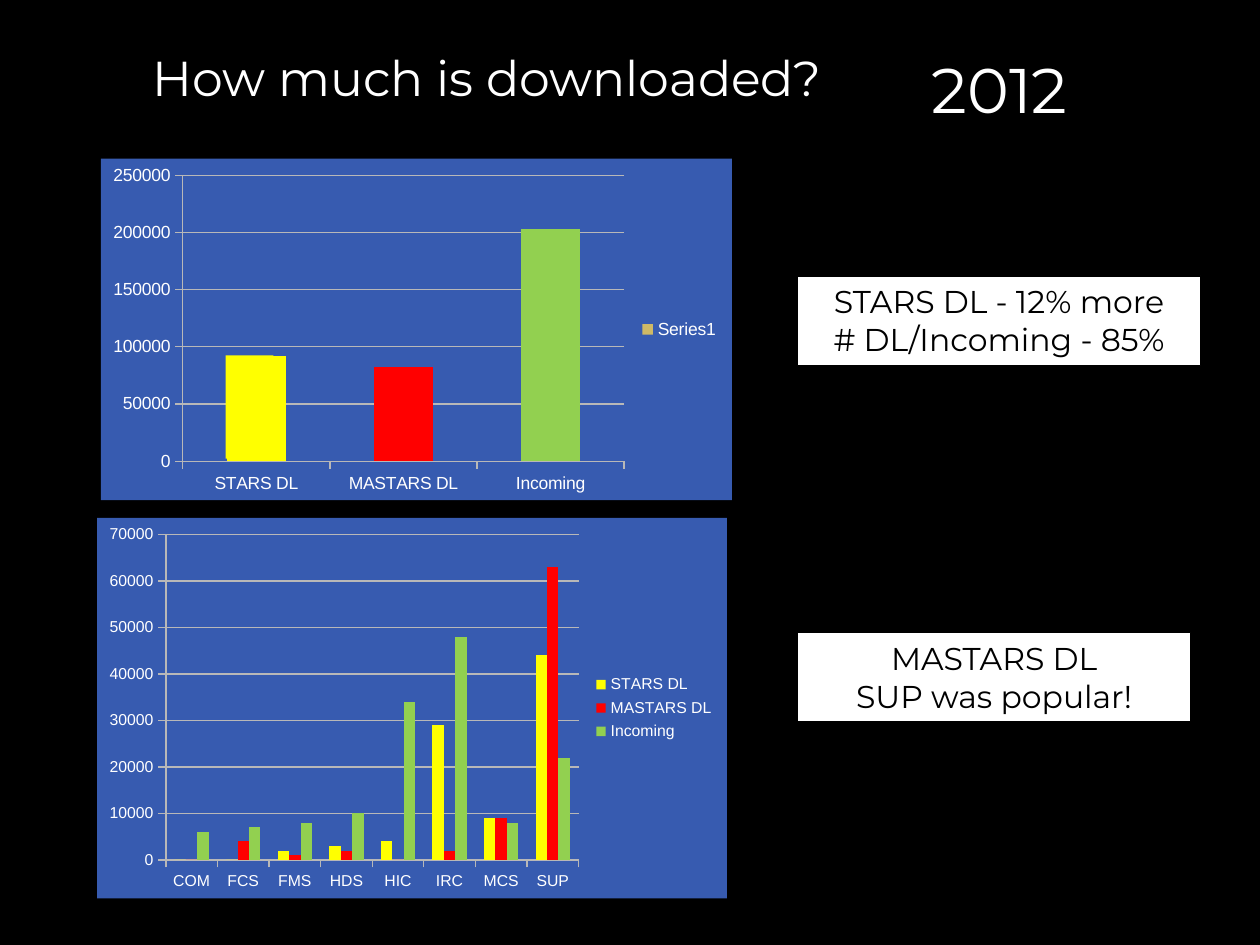
from dataclasses import dataclass

from lxml.etree import SubElement
from pptx import Presentation
from pptx.chart.data import CategoryChartData
from pptx.dml.color import RGBColor
from pptx.enum.chart import XL_CHART_TYPE, XL_LEGEND_POSITION, XL_TICK_MARK
from pptx.enum.shapes import MSO_SHAPE
from pptx.enum.text import MSO_ANCHOR, PP_ALIGN
from pptx.oxml.ns import qn
from pptx.util import Inches, Pt


@dataclass(frozen=True)
class Theme:
    """Colours, fonts and type sizes of the slide."""
    black: str = "000000"
    white: str = "FFFFFF"
    panel: str = "375BB0"
    grid: str = "B8B8B8"
    gold: str = "CEB966"
    stars: str = "FFFF00"
    mastars: str = "FF0000"
    incoming: str = "92D050"
    text_font: str = "Montserrat"
    chart_font: str = "Arial"
    title: int = 28
    year: int = 36
    note: int = 18
    totals: int = 10
    sources: int = 9


THEME = Theme()
SERIES_COLORS = (THEME.stars, THEME.mastars, THEME.incoming)
WIDTH, HEIGHT = Inches(10), Inches(7.5)
COLUMNS, ROWS = 100, 75


def place(col, row, cols, rows):
    """Turn grid columns and rows into left, top, width and height."""
    dx, dy = WIDTH / COLUMNS, HEIGHT / ROWS
    return [round(v) for v in (col * dx, row * dy, cols * dx, rows * dy)]


def paint(fill, color):
    """Give a fill one solid colour."""
    fill.solid()
    fill.fore_color.rgb = RGBColor.from_string(color)


def style_font(font, name, size, color):
    """Set the face, size and colour of a font."""
    font.name, font.size, font.bold = name, Pt(size), False
    font.color.rgb = RGBColor.from_string(color)


def add_block(slide, box, fill, line=None):
    """Add a plain rectangle, outlined if a line colour is given."""
    sp = slide.shapes.add_shape(MSO_SHAPE.RECTANGLE, *place(*box))
    sp.shadow.inherit = False
    paint(sp.fill, fill)
    if line:
        paint(sp.line.fill, line)
        sp.line.width = Pt(0.75)
    else:
        sp.line.fill.background()
    return sp


def add_label(slide, box, text, size, color, fill, align=PP_ALIGN.CENTER, line=None, wrap=True):
    """Add a rectangle that holds one or more lines of text."""
    tf = add_block(slide, box, fill, line).text_frame
    tf.word_wrap = wrap
    tf.vertical_anchor = MSO_ANCHOR.TOP
    tf.text = text
    for p in tf.paragraphs:
        p.alignment = align
        for r in p.runs:
            style_font(r.font, THEME.text_font, size, color)


def fill_panel(chart, color):
    """Fill the chart area and leave it without a border."""
    space = chart.element
    props = space.makeelement(qn("c:spPr"), {})
    space.find(qn("c:chart")).addnext(props)
    solid = SubElement(props, qn("a:solidFill"))
    SubElement(solid, qn("a:srgbClr"), val=color)
    SubElement(SubElement(props, qn("a:ln")), qn("a:noFill"))


def style_axis(axis, size):
    """Give an axis outside ticks, a pale line and white labels."""
    axis.major_tick_mark = XL_TICK_MARK.OUTSIDE
    axis.minor_tick_mark = XL_TICK_MARK.NONE
    paint(axis.format.line.fill, THEME.grid)
    style_font(axis.tick_labels.font, THEME.chart_font, size, THEME.white)


def add_column_chart(slide, box, categories, series, size, top, step):
    """Add a clustered column chart and return its plot."""
    data = CategoryChartData(number_format="General")
    data.categories = categories
    for name, values in series.items():
        data.add_series(name, values)
    frame = slide.shapes.add_chart(XL_CHART_TYPE.COLUMN_CLUSTERED, *place(*box), data)
    chart = frame.chart
    chart.has_title = False
    style_font(chart.font, THEME.chart_font, size, THEME.white)
    fill_panel(chart, THEME.panel)
    style_axis(chart.category_axis, size)
    axis = chart.value_axis
    style_axis(axis, size)
    axis.minimum_scale, axis.maximum_scale, axis.major_unit = 0, top, step
    axis.has_major_gridlines = True
    paint(axis.major_gridlines.format.line.fill, THEME.grid)
    chart.has_legend = True
    chart.legend.position = XL_LEGEND_POSITION.RIGHT
    chart.legend.include_in_layout = False
    style_font(chart.legend.font, THEME.chart_font, size, THEME.white)
    plot = chart.plots[0]
    plot.gap_width, plot.overlap, plot.vary_by_categories = 150, 0, False
    return plot


def add_totals(slide):
    """Chart the totals, with one colour for each column."""
    plot = add_column_chart(
        slide, (8, 12.6, 50.1, 27.1), ("STARS DL", "MASTARS DL", "Incoming"),
        {"Series1": (92000, 82000, 203000)}, THEME.totals, 250000, 50000)
    total = plot.series[0]
    paint(total.format.fill, THEME.gold)
    for i, color in enumerate(SERIES_COLORS):
        paint(total.points[i].format.fill, color)


def add_sources(slide):
    """Chart the downloads by source, with one colour for each series."""
    plot = add_column_chart(
        slide, (7.7, 41.1, 50, 30.2),
        ("COM", "FCS", "FMS", "HDS", "HIC", "IRC", "MCS", "SUP"),
        {"STARS DL": (0, 0, 2000, 3000, 4000, 29000, 9000, 44000),
         "MASTARS DL": (0, 4000, 1000, 2000, 0, 2000, 9000, 63000),
         "Incoming": (6000, 7000, 8000, 10000, 34000, 48000, 8000, 22000)},
        THEME.sources, 70000, 10000)
    for series, color in zip(plot.series, SERIES_COLORS):
        paint(series.format.fill, color)


def add_note(slide, row, cols, text, wrap):
    """Add a white remark beside a chart."""
    add_label(slide, (63.3, row, cols, 7.1), text, THEME.note, THEME.black,
              THEME.white, line=THEME.black, wrap=wrap)


def main():
    """Build the slide and save it."""
    prs = Presentation()
    prs.slide_width, prs.slide_height = WIDTH, HEIGHT
    slide = prs.slides.add_slide(prs.slide_layouts[6])
    paint(slide.background.fill, THEME.black)
    add_label(slide, (0, 3.3, 66.2, 5.7), "How much is downloaded?", THEME.title,
              THEME.white, THEME.black, align=PP_ALIGN.RIGHT)
    add_totals(slide)
    add_note(slide, 21.9, 32, "STARS DL - 12% more\n# DL/Incoming - 85%", False)
    add_sources(slide)
    add_note(slide, 50.2, 31.2, "MASTARS DL\nSUP was popular!", True)
    add_label(slide, (71.6, 3.5, 15.5, 7.1), "2012", THEME.year,
              THEME.white, THEME.black, wrap=False)
    add_block(slide, (17.9, 28.2, 3.8, 8.2), THEME.stars)
    prs.save("out.pptx")


if __name__ == "__main__":
    main()
